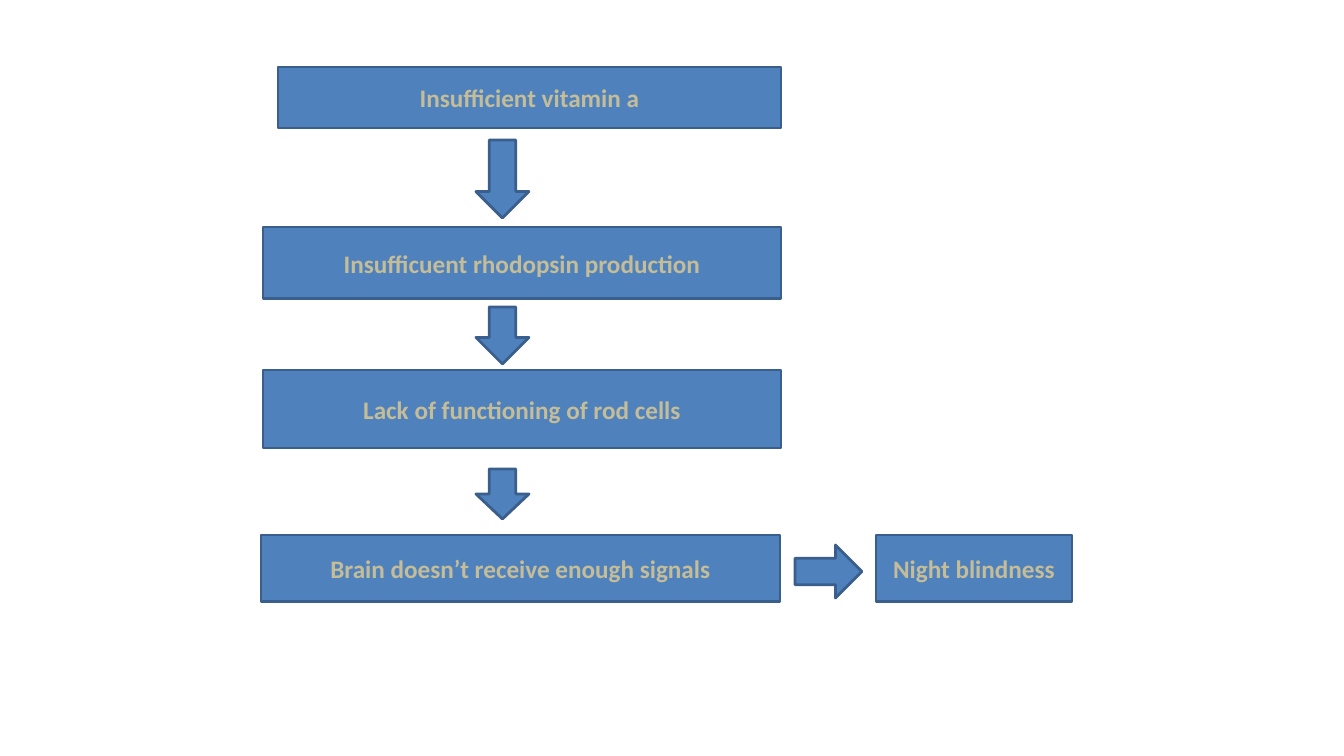
"""Build a flowchart slide showing how vitamin A shortage leads to night blindness."""
from pptx import Presentation
from pptx.dml.color import RGBColor
from pptx.enum.shapes import MSO_SHAPE
from pptx.enum.text import MSO_ANCHOR, PP_ALIGN
from pptx.util import Emu, Pt

RECT = MSO_SHAPE.RECTANGLE
DOWN = MSO_SHAPE.DOWN_ARROW
RIGHT = MSO_SHAPE.RIGHT_ARROW
MIDDLE = MSO_ANCHOR.MIDDLE
CENTER = PP_ALIGN.CENTER

BLUE = RGBColor(0x4F, 0x81, 0xBD)
DARK_BLUE = RGBColor(0x3A, 0x5F, 0x8C)
TAN = RGBColor(0xC4, 0xBD, 0x97)

PX_PER_INCH = 100.8
BLANK_LAYOUT = 6
DOWN_ARROW_LEFT = 476
ARROW_SPAN = 53

STEPS = [
    ("Insufficient vitamin a", 278, 67, 503, 61),
    ("Insufficuent rhodopsin production", 263, 227, 518, 72),
    ("Lack of functioning of rod cells", 263, 370, 518, 78),
    ("Brain doesn’t receive enough signals", 261, 535, 519, 67),
    ("Night blindness", 876, 535, 196, 67),
]
DOWN_ARROWS = [(140, 78), (307, 57), (469, 50)]


def px(n):
    """Turn pixels into EMU."""
    return Emu(round(n * 914400 / PX_PER_INCH))


def add_block(slide, kind, left, top, width, height):
    """Add a blue outlined preset shape."""
    sp = slide.shapes.add_shape(kind, px(left), px(top), px(width), px(height))
    sp.shadow.inherit = False
    sp.fill.solid()
    sp.fill.fore_color.rgb = BLUE
    sp.line.color.rgb = DARK_BLUE
    sp.line.width = Pt(2)
    return sp


def add_step(slide, text, left, top, width, height):
    """Add a flowchart box with a centred bold label."""
    tf = add_block(slide, RECT, left, top, width, height).text_frame
    tf.word_wrap = True
    tf.vertical_anchor = MIDDLE
    p = tf.paragraphs[0]
    p.text = text
    p.alignment = CENTER
    p.font.name = "Calibri"
    p.font.size = Pt(18)
    p.font.bold = True
    p.font.color.rgb = TAN


def main():
    """Build and save the slide."""
    prs = Presentation()
    prs.slide_width, prs.slide_height = px(1344), px(756)
    slide = prs.slides.add_slide(prs.slide_layouts[BLANK_LAYOUT])
    for step in STEPS:
        add_step(slide, *step)
    for top, height in DOWN_ARROWS:
        add_block(slide, DOWN, DOWN_ARROW_LEFT, top, ARROW_SPAN, height)
    add_block(slide, RIGHT, 795, 545, 67, ARROW_SPAN)
    prs.save("out.pptx")


if __name__ == "__main__":
    main()
